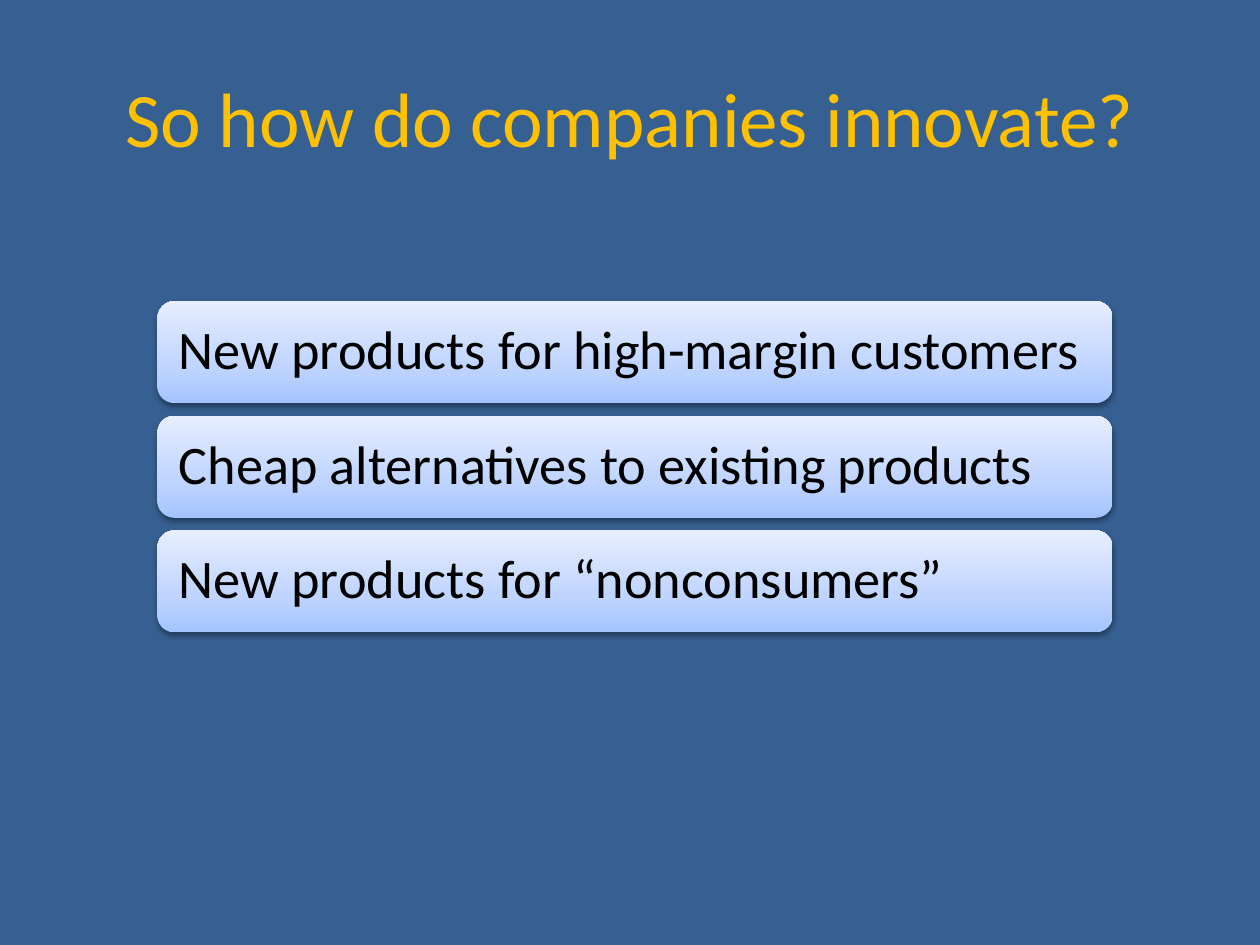
"""Build a slide listing three ways in which companies innovate."""
from lxml.etree import SubElement
from pptx import Presentation
from pptx.dml.color import RGBColor
from pptx.enum.shapes import MSO_SHAPE
from pptx.enum.text import MSO_ANCHOR, PP_ALIGN
from pptx.oxml.ns import qn
from pptx.util import Inches, Pt

TITLE = "So how do companies innovate?"
APPROACHES = [
    "New products for high-margin customers",
    "Cheap alternatives to existing products",
    "New products for “nonconsumers”",
]
COLORS = {
    "background": "376092",
    "title": "FFC000",
    "text": "000000",
    "shadow": "000000",
}
GRADIENT = [(0, "A4C4FF"), (35, "BFD4FF"), (100, "E6EEFF")]
FONT = "Calibri"
BAR_LEFT, BAR_TOP, BAR_WIDTH, BAR_HEIGHT = 1.25, 2.39, 7.58, 0.81
BAR_PITCH = 0.91
BAR_INSET = 0.17


def format_text(text_frame, text, size, color, alignment):
    text_frame.text = text
    text_frame.word_wrap = True
    text_frame.vertical_anchor = MSO_ANCHOR.MIDDLE
    paragraph = text_frame.paragraphs[0]
    paragraph.alignment = alignment
    font = paragraph.runs[0].font
    font.name = FONT
    font.size = Pt(size)
    font.color.rgb = RGBColor.from_string(color)
    return paragraph


def add_color(parent, color):
    return SubElement(parent, qn("a:srgbClr"), val=color)


def apply_gradient(shape):
    shape.fill.gradient()
    shape.fill.gradient_angle = 90
    stops = shape.element.spPr.find(".//" + qn("a:gsLst"))
    for stop in list(stops):
        stops.remove(stop)
    for position, color in GRADIENT:
        add_color(SubElement(stops, qn("a:gs"), pos=str(position * 1000)), color)


def apply_shadow(shape):
    shape.shadow.inherit = False
    effects = shape.element.spPr.find(qn("a:effectLst"))
    shadow = SubElement(
        effects, qn("a:outerShdw"), blurRad=str(Pt(3.1)), dist=str(Pt(1.6)),
        dir="5400000", rotWithShape="0",
    )
    SubElement(add_color(shadow, COLORS["shadow"]), qn("a:alpha"), val="38000")


def add_bar(slide, row, text):
    bar = slide.shapes.add_shape(
        MSO_SHAPE.ROUNDED_RECTANGLE, Inches(BAR_LEFT),
        Inches(BAR_TOP + row * BAR_PITCH), Inches(BAR_WIDTH), Inches(BAR_HEIGHT),
    )
    apply_gradient(bar)
    bar.line.fill.background()
    apply_shadow(bar)
    text_frame = bar.text_frame
    text_frame.margin_left = text_frame.margin_right = Inches(BAR_INSET - 0.04)
    text_frame.margin_top = text_frame.margin_bottom = Inches(BAR_INSET)
    paragraph = format_text(text_frame, text, 31, COLORS["text"], PP_ALIGN.LEFT)
    paragraph.line_spacing = 0.9


def main():
    presentation = Presentation()
    presentation.slide_width, presentation.slide_height = Inches(10), Inches(7.5)
    slide = presentation.slides.add_slide(presentation.slide_layouts[5])
    background = slide.background.fill
    background.solid()
    background.fore_color.rgb = RGBColor.from_string(COLORS["background"])

    title = slide.shapes.title
    title.left, title.top = Inches(0.5), Inches(0.3)
    title.width, title.height = Inches(9), Inches(1.25)
    format_text(title.text_frame, TITLE, 44, COLORS["title"], PP_ALIGN.CENTER)

    for row, approach in enumerate(APPROACHES):
        add_bar(slide, row, approach)
    presentation.save("out.pptx")


if __name__ == "__main__":
    main()
